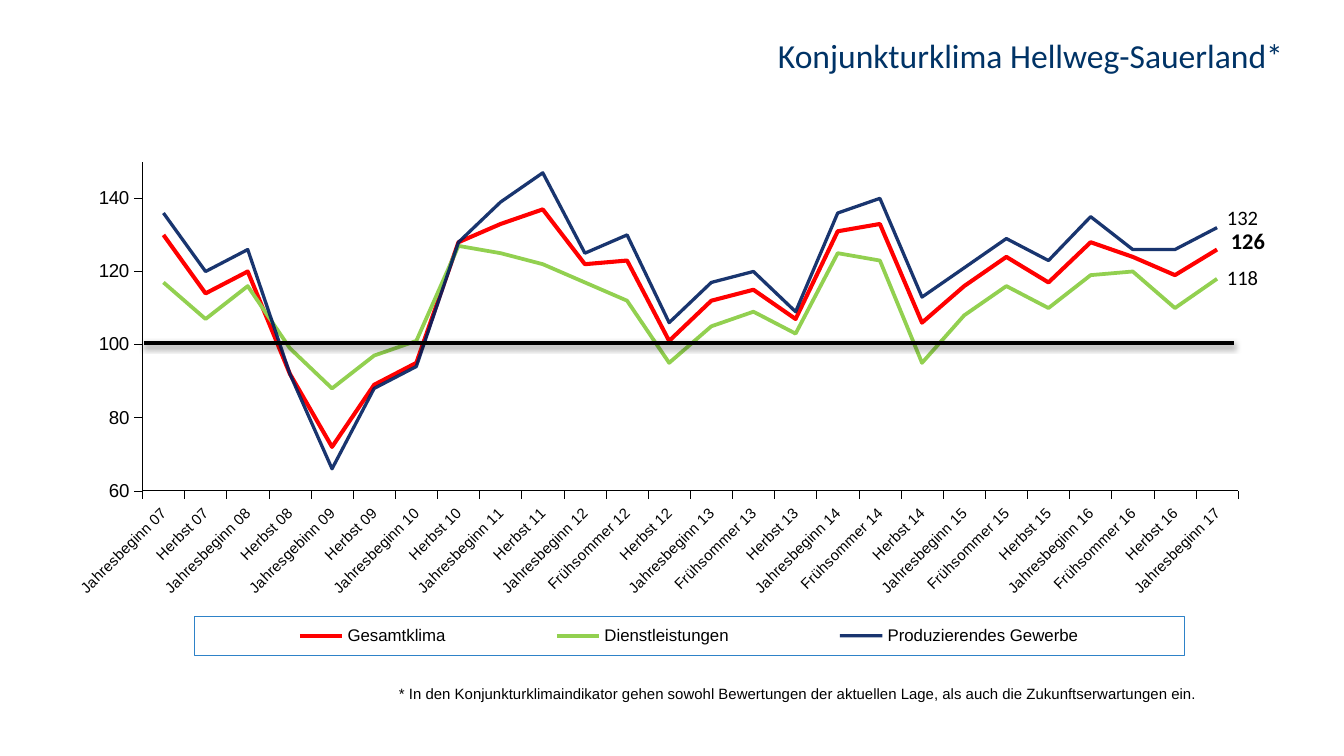
import pptx
import pptx.chart.data
import pptx.dml.color
import pptx.enum.chart
import pptx.enum.dml
import pptx.enum.shapes
import pptx.enum.text
import pptx.oxml
import pptx.oxml.ns
import pptx.util
from dataclasses import dataclass

PX = 4572  # EMU per px, 200 px to the inch
qn = pptx.oxml.ns.qn
NAMESPACES = pptx.oxml.ns.nsdecls("a", "c")


@dataclass(frozen=True)
class Theme:
    black: str = "000000"
    title: str = "003366"
    total: str = "FF0000"
    services: str = "92D050"
    industry: str = "002060"
    legend_border: str = "2E82C8"
    body_font: str = "Arial"
    label_font: str = "Calibri"
    title_size: int = 18
    total_size: int = 12
    value_size: int = 11
    axis_size: int = 10
    legend_size: int = 9
    small_size: int = 8


THEME = Theme()

CATEGORIES = [
    "Jahresbeginn 07", "Herbst 07", "Jahresbeginn 08", "Herbst 08",
    "Jahresgebinn 09", "Herbst 09", "Jahresbeginn 10", "Herbst 10",
    "Jahresbeginn 11", "Herbst 11", "Jahresbeginn 12", "Frühsommer 12",
    "Herbst 12", "Jahresbeginn 13", "Frühsommer 13", "Herbst 13",
    "Jahresbeginn 14", "Frühsommer 14", "Herbst 14", "Jahresbeginn 15",
    "Frühsommer 15", "Herbst 15", "Jahresbeginn 16", "Frühsommer 16",
    "Herbst 16", "Jahresbeginn 17",
]

# name, colour, line width in points, values
SERIES = [
    ("Gesamtklima", THEME.total, 2.17,
     [130, 114, 120, 92, 72, 89, 95, 128, 133, 137, 122, 123, 101,
      112, 115, 107, 131, 133, 106, 116, 124, 117, 128, 124, 119, 126]),
    ("Dienstleistungen", THEME.services, 2,
     [117, 107, 116, 99, 88, 97, 101, 127, 125, 122, 117, 112, 95,
      105, 109, 103, 125, 123, 95, 108, 116, 110, 119, 120, 110, 118]),
    ("Produzierendes Gewerbe", THEME.industry, 1.75,
     [136, 120, 126, 92, 66, 88, 94, 128, 139, 147, 125, 130, 106,
      117, 120, 109, 136, 140, 113, 121, 129, 123, 135, 126, 126, 132]),
]


def px(*lengths):
    return [length * PX for length in lengths]


def set_attributes(target, values):
    for name, value in values.items():
        setattr(target, name, value)


def format_font(font, size, name=THEME.body_font, color=THEME.black, bold=False):
    set_attributes(font, {"size": pptx.util.Pt(size), "name": name, "bold": bold})
    font.color.rgb = pptx.dml.color.RGBColor.from_string(color)


def format_line(line, color, width):
    line.color.rgb = pptx.dml.color.RGBColor.from_string(color)
    line.width = pptx.util.Pt(width)


def write_text(shape, box, text, size, name, color=THEME.black, bold=False,
               alignment=pptx.enum.text.PP_ALIGN.LEFT):
    left, top, width, height = px(*box)
    set_attributes(shape, {"left": left, "top": top, "width": width, "height": height})
    set_attributes(shape.text_frame, {
        "text": text,
        "word_wrap": True,
        "auto_size": pptx.enum.text.MSO_AUTO_SIZE.NONE,
        "vertical_anchor": pptx.enum.text.MSO_ANCHOR.TOP,
    })
    paragraph = shape.text_frame.paragraphs[0]
    paragraph.alignment = alignment
    format_font(paragraph.runs[0].font, size, name, color, bold)


def add_text(slide, box, *text_format, **options):
    write_text(slide.shapes.add_textbox(*px(*box)), box, *text_format, **options)


def manual_layout(x, y, width, height, inner=False):
    target = '<c:layoutTarget val="inner"/>' if inner else ""
    return pptx.oxml.parse_xml(
        f'<c:layout {NAMESPACES}><c:manualLayout>{target}'
        '<c:xMode val="edge"/><c:yMode val="edge"/>'
        f'<c:x val="{x}"/><c:y val="{y}"/><c:w val="{width}"/><c:h val="{height}"/>'
        '</c:manualLayout></c:layout>')


def format_axes(chart):
    category_axis, value_axis = chart.category_axis, chart.value_axis
    for axis, size, width in ((category_axis, THEME.small_size, 0.27),
                              (value_axis, THEME.axis_size, 0.25)):
        set_attributes(axis, {
            "has_major_gridlines": False,
            "major_tick_mark": pptx.enum.chart.XL_TICK_MARK.OUTSIDE,
            "minor_tick_mark": pptx.enum.chart.XL_TICK_MARK.NONE,
        })
        format_font(axis.tick_labels.font, size)
        format_line(axis.format.line, THEME.black, width)
    set_attributes(value_axis, {"minimum_scale": 60, "maximum_scale": 150, "major_unit": 20})
    value_axis.format.line.dash_style = pptx.enum.dml.MSO_LINE.ROUND_DOT
    # Slanted category labels
    body = category_axis._element.find(qn("c:txPr")).find(qn("a:bodyPr"))
    body.set("rot", "-2700000")
    body.set("vert", "horz")


def format_legend(chart):
    chart.has_legend = True
    legend = chart.legend
    set_attributes(legend, {
        "position": pptx.enum.chart.XL_LEGEND_POSITION.RIGHT,
        "include_in_layout": False,
    })
    format_font(legend.font, THEME.legend_size)
    element = legend._element
    for old in element.findall(qn("c:layout")):
        element.remove(old)
    element.find(qn("c:legendPos")).addnext(manual_layout(0.122, 0.885, 0.82, 0.073))
    element.find(qn("c:txPr")).addprevious(pptx.oxml.parse_xml(
        f'<c:spPr {NAMESPACES}><a:noFill/><a:ln w="3175"><a:solidFill>'
        f'<a:srgbClr val="{THEME.legend_border}"/></a:solidFill>'
        '<a:prstDash val="solid"/></a:ln></c:spPr>'))


def add_climate_chart(slide, box):
    data = pptx.chart.data.CategoryChartData(number_format="0")
    data.categories = CATEGORIES
    for name, _, _, values in SERIES:
        data.add_series(name, values)
    chart = slide.shapes.add_chart(
        pptx.enum.chart.XL_CHART_TYPE.LINE, *px(*box), data).chart
    chart.has_title = False
    format_font(chart.font, THEME.legend_size)
    plot = chart.plots[0]
    plot.vary_by_categories = False
    for series, (_, color, width, _) in zip(plot.series, SERIES):
        series.smooth = False
        series.marker.style = pptx.enum.chart.XL_MARKER_STYLE.NONE
        format_line(series.format.line, color, width)
        if color == THEME.industry:
            line_color = series._element.find(qn("c:spPr")).find(".//" + qn("a:srgbClr"))
            line_color.append(pptx.oxml.parse_xml(f'<a:alpha {NAMESPACES} val="90000"/>'))
    format_axes(chart)
    format_legend(chart)
    plot_area = chart._chartSpace.chart.plotArea
    for old in plot_area.findall(qn("c:layout")):
        plot_area.remove(old)
    plot_area.insert(0, manual_layout(0.079, 0.04, 0.908, 0.612, inner=True))


def add_baseline(slide, start, end):
    connector = slide.shapes.add_connector(
        pptx.enum.shapes.MSO_CONNECTOR.STRAIGHT, *px(*start, *end))
    format_line(connector.line, THEME.black, 2)
    connector._element.spPr.append(pptx.oxml.parse_xml(
        f'<a:effectLst {NAMESPACES}><a:outerShdw blurRad="39370" dist="20320" '
        f'dir="5400000" rotWithShape="0"><a:srgbClr val="{THEME.black}">'
        '<a:alpha val="38000"/></a:srgbClr></a:outerShdw></a:effectLst>'))


def main():
    presentation = pptx.Presentation()
    width, height = px(2000, 1125)
    set_attributes(presentation, {"slide_width": width, "slide_height": height})
    slide = presentation.slides.add_slide(presentation.slide_layouts[5])

    # Title
    write_text(slide.shapes.title, (764, 42, 1166, 80), "Konjunkturklima Hellweg-Sauerland*",
               THEME.title_size, THEME.label_font, THEME.title,
               alignment=pptx.enum.text.PP_ALIGN.RIGHT)

    # Chart and footnote
    add_climate_chart(slide, (70, 209, 1796, 800))
    add_text(slide, (574, 1009, 1322, 74),
             "* In den Konjunkturklimaindikator gehen sowohl Bewertungen der aktuellen Lage, "
             "als auch die Zukunftserwartungen ein.", THEME.small_size, THEME.body_font)

    # Latest values beside the line ends
    for left, top, text, size, bold in ((1806, 385, "118", THEME.value_size, False),
                                        (1806, 295, "132", THEME.value_size, False),
                                        (1812, 328, "126", THEME.total_size, True)):
        add_text(slide, (left, top, 118, 58), text, size, THEME.label_font, bold=bold)

    # Neutral level at 100
    add_baseline(slide, (214, 510), (1836, 510))
    presentation.save("out.pptx")


if __name__ == "__main__":
    main()
